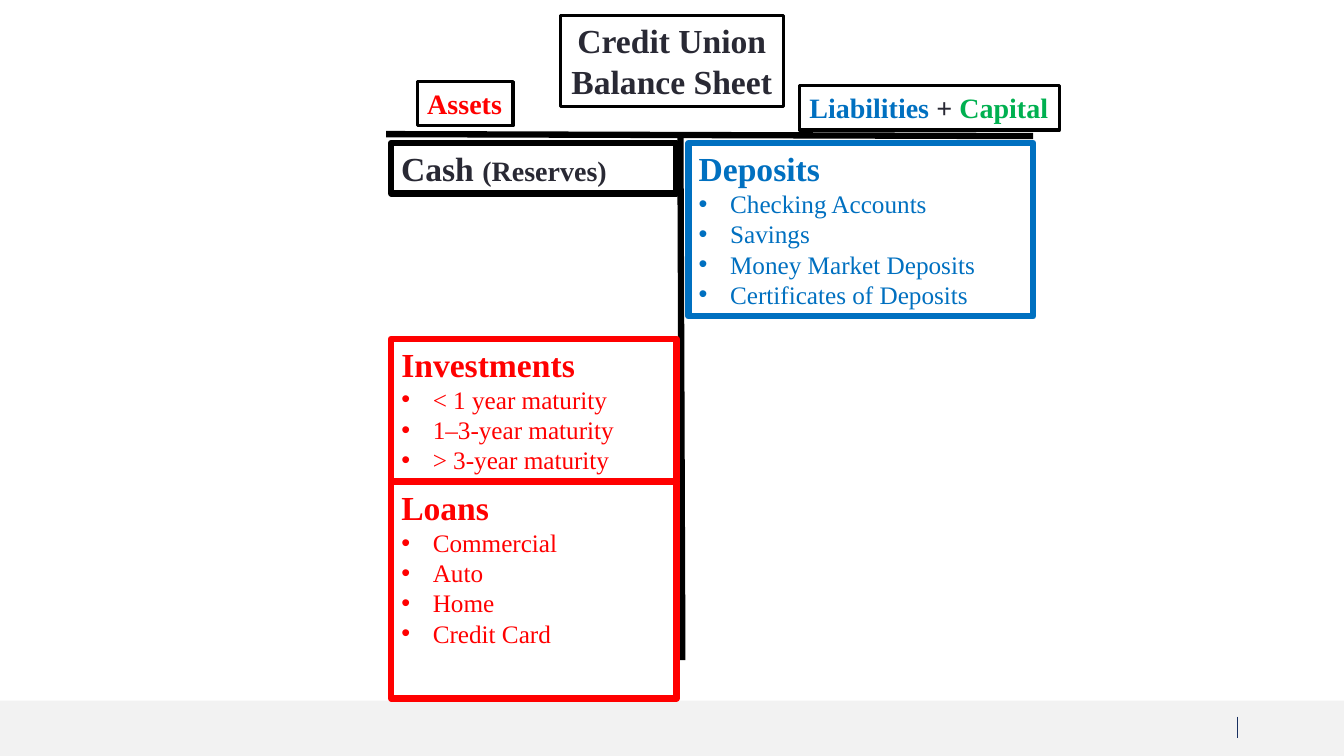
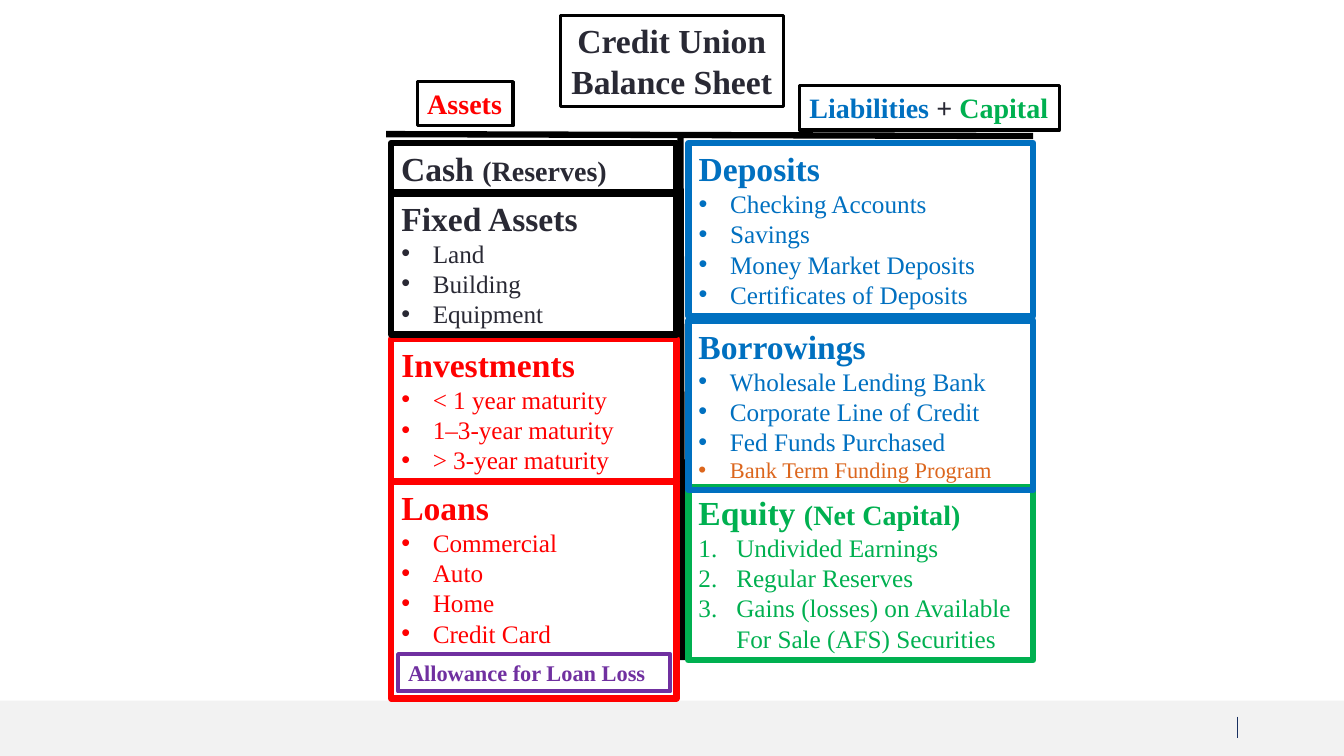
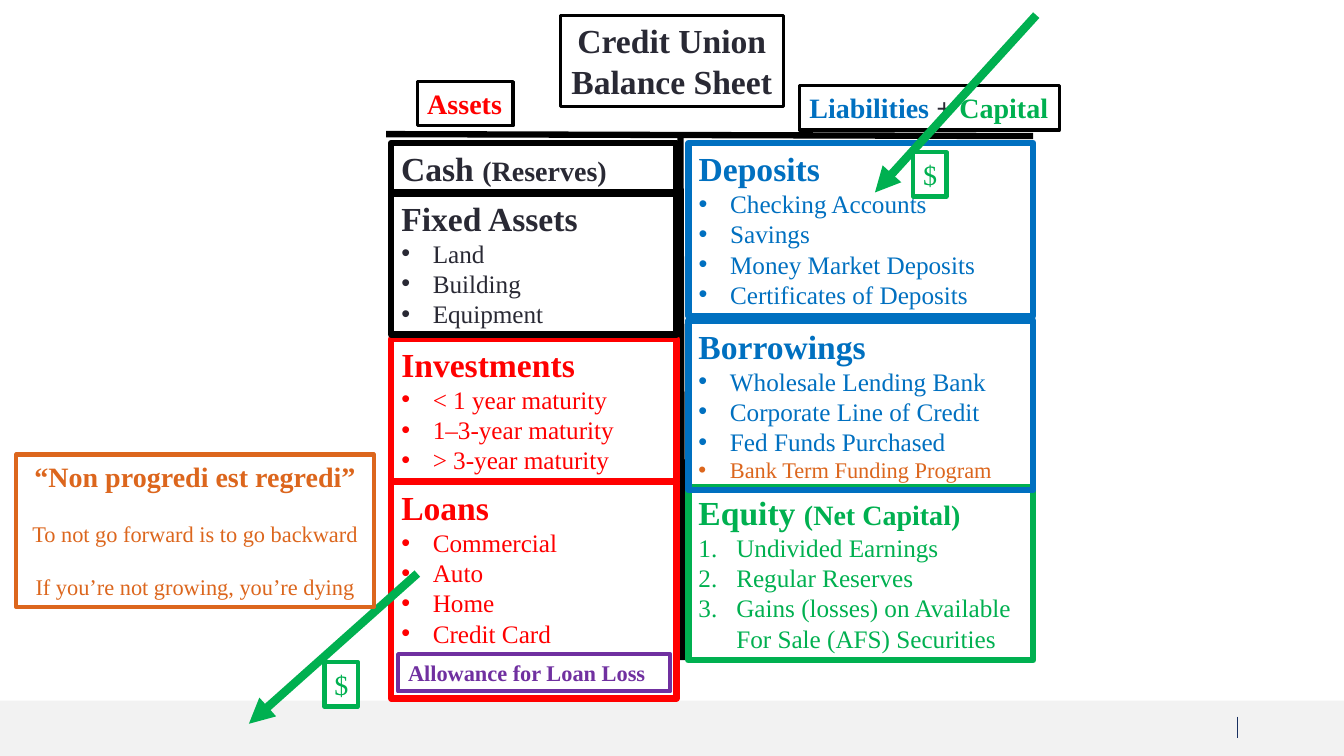
from dataclasses import dataclass
from typing import Optional

from lxml import etree
from pptx import Presentation
from pptx.dml.color import RGBColor
from pptx.enum import shapes, text
from pptx.oxml import ns
from pptx.util import Pt

BLACK = RGBColor(0x00, 0x00, 0x00)
WHITE = RGBColor(0xFF, 0xFF, 0xFF)
INK = RGBColor(0x29, 0x29, 0x34)
RED = RGBColor(0xFF, 0x00, 0x00)
BLUE = RGBColor(0x00, 0x70, 0xC0)
GREEN = RGBColor(0x00, 0xB0, 0x50)
PURPLE = RGBColor(0x70, 0x30, 0xA0)
ORANGE = RGBColor(0xDC, 0x66, 0x1D)
BAND = RGBColor(0xF2, 0xF2, 0xF2)
NAVY = RGBColor(0x19, 0x30, 0x61)

FONT = "Times New Roman"
SLIDE_WIDTH, SLIDE_HEIGHT = 960, 540
COMPARISON_LAYOUT = 4
ASSETS_LEFT, ASSETS_WIDTH = 279.4, 203.8
FUNDING_LEFT, FUNDING_WIDTH = 491.8, 246.2
INDENTS = {"": 0, "bullet": 22.5, "number": 27}


@dataclass(frozen=True)
class Run:
    text: str
    size: float
    color: RGBColor
    bold: bool = True


@dataclass(frozen=True)
class Line:
    runs: tuple[Run, ...]
    marker: str = ""
    space_before: float = 0


@dataclass(frozen=True)
class Box:
    left: float
    top: float
    width: float
    height: float
    border: RGBColor
    weight: float
    lines: tuple[Line, ...]
    fill: Optional[RGBColor] = None
    centered: bool = False
    wrap: bool = True

    @property
    def is_list(self) -> bool:
        return any(line.marker for line in self.lines)


@dataclass(frozen=True)
class Stroke:
    start: tuple[float, float]
    end: tuple[float, float]
    color: RGBColor
    weight: float
    arrow: bool = False


def panel(column: tuple[float, float], top: float, height: float, border: RGBColor, color: RGBColor,
          heading: str, items: tuple[str, ...] = (), marker: str = "bullet",
          suffix: str = "", extra: tuple[Line, ...] = ()) -> Box:
    heading_runs = (Run(heading, 24, color),)
    if suffix:
        heading_runs += (Run(suffix, 20, color),)
    entries = tuple(Line((Run(item, 18, color, False),), marker) for item in items)
    left, width = column
    return Box(left, top, width, height, border, 4.5, (Line(heading_runs), *entries, *extra))


def dollar_tag(left: float, top: float) -> Box:
    return Box(left, top, 23.8, 31.7, GREEN, 3, (Line((Run("$", 20, GREEN, False),)),), fill=WHITE)


ASSETS = (ASSETS_LEFT, ASSETS_WIDTH)
FUNDING = (FUNDING_LEFT, FUNDING_WIDTH)

TITLE = Box(400.3, 10.8, 159.1, 65.5, BLACK, 2.25,
            (Line((Run("Credit Union", 24, INK),)), Line((Run("Balance Sheet", 24, INK),))),
            centered=True, wrap=False)
T_ACCOUNT = (
    Stroke((275.8, 95.8), (738, 97.2), BLACK, 4.5),
    Stroke((487.4, 471.6), (486, 95.8), BLACK, 4.5),
)
SIDE_LABELS = (
    Box(298.1, 58.3, 68.4, 31.7, BLACK, 2.25, (Line((Run("Assets", 20, RED),)),), wrap=False),
    Box(571, 61.2, 185.8, 31.7, BLACK, 2.25,
        (Line((Run("Liabilities ", 20, BLUE), Run("+ ", 20, INK), Run("Capital", 20, GREEN))),),
        wrap=False),
)
INVESTMENTS = panel(ASSETS, 241.9, 101.5, RED, RED, "Investments",
                    ("< 1 year maturity", "1–3-year maturity", "> 3-year maturity"))
LOANS = panel(ASSETS, 344.2, 154.8, RED, RED, "Loans", ("Commercial", "Auto", "Home", "Credit Card"))
FIXED_ASSETS = panel(ASSETS, 137.5, 101.5, BLACK, INK, "Fixed Assets", ("Land", "Building", "Equipment"))
DEPOSITS = panel(FUNDING, 102.2, 123.8, BLUE, BLUE, "Deposits",
                 ("Checking Accounts", "Savings", "Money Market Deposits", "Certificates of Deposits"))
EQUITY = panel(FUNDING, 347.8, 123.8, GREEN, GREEN, "Equity ",
               ("Undivided Earnings", "Regular Reserves",
                "Gains (losses) on Available For Sale (AFS) Securities"),
               marker="number", suffix="(Net Capital)")
CASH = panel(ASSETS, 102.2, 36, BLACK, INK, "Cash ", suffix="(Reserves)")
ALLOWANCE = Box(284.4, 467.3, 194.4, 26.6, PURPLE, 3, (Line((Run("Allowance for Loan Loss", 16, PURPLE),)),))
BORROWINGS = panel(FUNDING, 229, 121, BLUE, BLUE, "Borrowings",
                   ("Wholesale Lending Bank", "Corporate Line of Credit", "Fed Funds Purchased"),
                   extra=(Line((Run("Bank Term Funding Program", 16, ORANGE, False),), "bullet"),))
QUOTE = Box(11.5, 324.7, 255.6, 108.7, ORANGE, 3,
            (Line((Run("“Non progredi est regredi”", 20, ORANGE),)),
             Line((Run("To not go forward is to go backward", 16, ORANGE, False),), space_before=19),
             Line((Run("If you’re not growing, you’re dying", 16, ORANGE, False),), space_before=19)),
            fill=WHITE, centered=True)
CASH_FLOWS = (
    Stroke((740.2, 10.8), (625, 137.5), GREEN, 6, arrow=True),
    Stroke((298.1, 409.7), (177.8, 517), GREEN, 6, arrow=True),
)

FRAME = (*T_ACCOUNT, *SIDE_LABELS)
FULL_SHEET = (*FRAME, INVESTMENTS, LOANS, FIXED_ASSETS, DEPOSITS, EQUITY, CASH, ALLOWANCE, BORROWINGS)
SLIDES = (
    (*FRAME, INVESTMENTS, LOANS, DEPOSITS, CASH),
    FULL_SHEET,
    (*FULL_SHEET, *CASH_FLOWS, dollar_tag(652.3, 108.7), dollar_tag(231.8, 473), QUOTE),
)


def set_marker(paragraph, marker: str) -> None:
    properties = paragraph._p.get_or_add_pPr()
    indent = Pt(INDENTS[marker])
    properties.set("marL", str(indent))
    properties.set("indent", str(-indent))
    if marker == "bullet":
        etree.SubElement(properties, ns.qn("a:buFont")).set("typeface", "Arial")
        etree.SubElement(properties, ns.qn("a:buChar")).set("char", "•")
    elif marker == "number":
        etree.SubElement(properties, ns.qn("a:buFont")).set("typeface", "+mj-lt")
        etree.SubElement(properties, ns.qn("a:buAutoNum")).set("type", "arabicPeriod")
    else:
        etree.SubElement(properties, ns.qn("a:buNone"))


def write_lines(frame, box: Box) -> None:
    frame.word_wrap = box.wrap
    frame.auto_size = text.MSO_AUTO_SIZE.NONE
    frame.vertical_anchor = text.MSO_ANCHOR.TOP
    frame.margin_left = frame.margin_right = Pt(7.2)
    frame.margin_top = frame.margin_bottom = Pt(3.6)
    for index, line in enumerate(box.lines):
        paragraph = frame.add_paragraph() if index else frame.paragraphs[0]
        paragraph.alignment = text.PP_ALIGN.CENTER if box.centered else text.PP_ALIGN.LEFT
        paragraph.line_spacing = 1.0
        paragraph.space_before = Pt(line.space_before)
        paragraph.space_after = Pt(0)
        set_marker(paragraph, line.marker)
        for part in line.runs:
            run = paragraph.add_run()
            run.text = part.text
            run.font.name = FONT
            run.font.size = Pt(part.size)
            run.font.bold = part.bold
            run.font.color.rgb = part.color


def draw_box(slide, box: Box, placeholder=None) -> None:
    bounds = [Pt(value) for value in (box.left, box.top, box.width, box.height)]
    if placeholder is None:
        shape = slide.shapes.add_textbox(*bounds)
    else:
        shape = placeholder
        shape.left, shape.top, shape.width, shape.height = bounds
        slide.shapes.element.append(shape.element)
    if box.fill is None:
        shape.fill.background()
    else:
        shape.fill.solid()
        shape.fill.fore_color.rgb = box.fill
    shape.line.color.rgb = box.border
    shape.line.width = Pt(box.weight)
    write_lines(shape.text_frame, box)


def draw_stroke(slide, stroke: Stroke):
    points = [Pt(value) for value in (*stroke.start, *stroke.end)]
    connector = slide.shapes.add_connector(shapes.MSO_CONNECTOR.STRAIGHT, *points)
    connector.line.color.rgb = stroke.color
    connector.line.width = Pt(stroke.weight)
    if stroke.arrow:
        etree.SubElement(connector.line._get_or_add_ln(), ns.qn("a:tailEnd")).set("type", "triangle")
    etree.SubElement(connector.element.spPr, ns.qn("a:effectLst"))
    return connector


def add_master_footer(presentation, slide) -> None:
    band = slide.shapes.add_shape(shapes.MSO_SHAPE.RECTANGLE, Pt(0), Pt(500.4), Pt(SLIDE_WIDTH), Pt(39.6))
    band.shadow.inherit = False
    band.fill.solid()
    band.fill.fore_color.rgb = BAND
    band.line.fill.background()
    divider = draw_stroke(slide, Stroke((884.2, 511.9), (884.2, 527), NAVY, 0.5))
    for shape in (band, divider):
        presentation.slide_master.shapes.element.append(shape.element)


def draw_slide(slide, items: tuple) -> None:
    draw_box(slide, TITLE, slide.shapes.title)
    bodies = [shape for shape in slide.placeholders if shape.placeholder_format.idx != 0]
    for item in items:
        if isinstance(item, Stroke):
            draw_stroke(slide, item)
        else:
            draw_box(slide, item, bodies.pop(0) if item.is_list and bodies else None)
    for unused in bodies:
        slide.shapes.element.remove(unused.element)


def main() -> None:
    presentation = Presentation()
    presentation.slide_width = Pt(SLIDE_WIDTH)
    presentation.slide_height = Pt(SLIDE_HEIGHT)
    for index, items in enumerate(SLIDES):
        slide = presentation.slides.add_slide(presentation.slide_layouts[COMPARISON_LAYOUT])
        if index == 0:
            add_master_footer(presentation, slide)
        draw_slide(slide, items)
    presentation.save("out.pptx")


if __name__ == "__main__":
    main()
